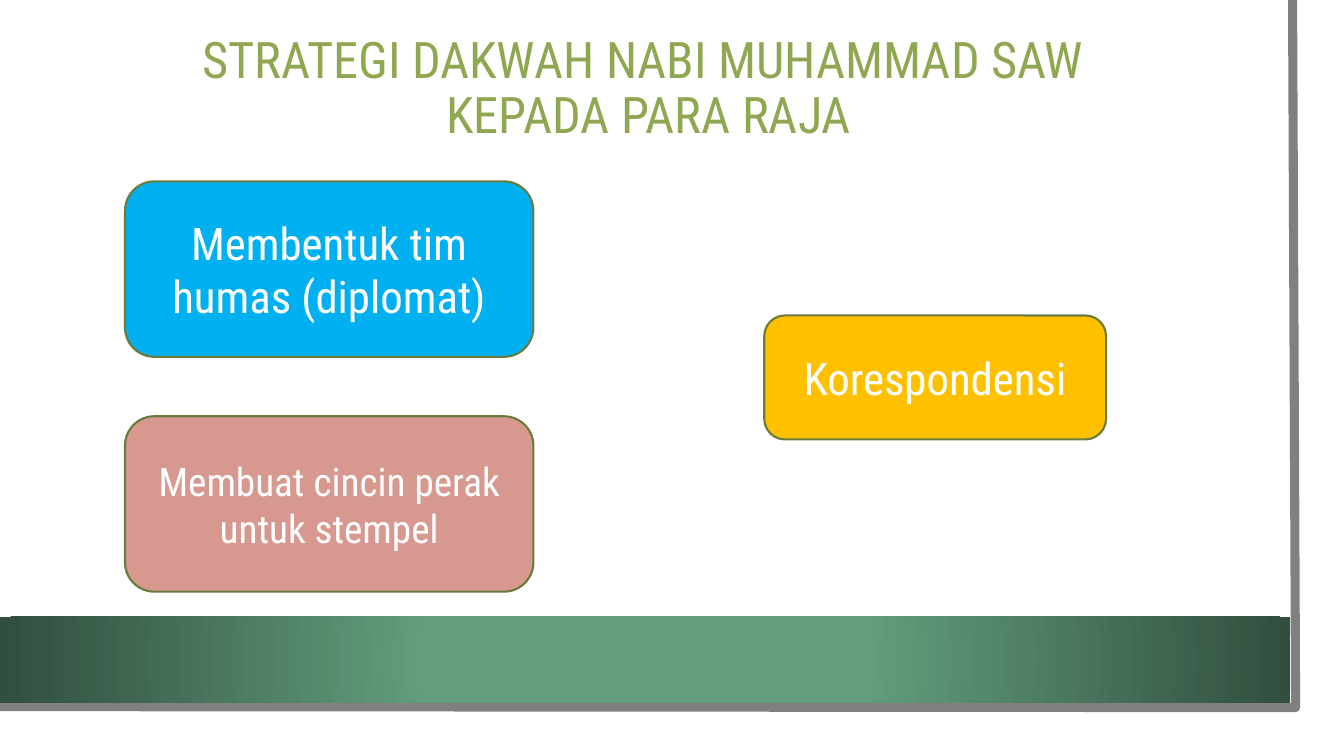
from lxml import etree
from pptx import Presentation, util as u
from pptx.dml.color import RGBColor
from pptx.enum import shapes, text
from pptx.oxml import ns

WHITE = RGBColor(0xFF, 0xFF, 0xFF)
GREY = RGBColor(0x80, 0x80, 0x80)
OLIVE = RGBColor(0x8F, 0xA7, 0x51)
DARK_OLIVE = RGBColor(0x6A, 0x7C, 0x3C)
GREEN = RGBColor(0x62, 0x9D, 0x7D)
DARK_GREEN = RGBColor(0x31, 0x4E, 0x3E)
BLUE = RGBColor(0x00, 0xB0, 0xF0)
ROSE = RGBColor(0xD6, 0x98, 0x8F)
AMBER = RGBColor(0xFF, 0xC0, 0x00)


def write(shape, words, *, font, size, color, spacing=None):
    """Put centred text in a shape; a newline becomes a line break."""
    frame = shape.text_frame
    frame.word_wrap = True
    frame.vertical_anchor = text.MSO_ANCHOR.MIDDLE
    para = frame.paragraphs[0]
    para.alignment = text.PP_ALIGN.CENTER
    para.line_spacing = spacing
    for number, line in enumerate(words.split("\n")):
        if number:
            para.add_line_break()
        span = para.add_run()
        span.text = line
        span.font.name = font
        span.font.size = u.Pt(size)
        span.font.color.rgb = color


class SlideBuilder:
    font = "Roboto Condensed"

    def __init__(self, page):
        self.page = page

    def shape(self, kind, at, fill=None):
        shape = self.page.shapes.add_shape(kind, *map(u.Inches, at))
        shape.shadow.inherit = False
        shape.line.fill.background()
        if fill is not None:
            shape.fill.solid()
            shape.fill.fore_color.rgb = fill
        return shape

    def radial_bar(self, at, inner, outer, inner_stop):
        bar = self.shape(shapes.MSO_SHAPE.RECTANGLE, at)
        bar.fill.gradient()
        settings = ((inner, inner_stop), (outer, 1))
        for stop, (color, position) in zip(bar.fill.gradient_stops, settings):
            stop.color.rgb = color
            stop.position = position
        # Swap the linear direction for a circle around the centre
        gradient = bar.fill._fill._gradFill
        gradient.remove(gradient.find(ns.qn("a:lin")))
        circle = etree.SubElement(gradient, ns.qn("a:path"), path="circle")
        etree.SubElement(circle, ns.qn("a:fillToRect"),
                         {side: "50000" for side in "ltrb"})

    def edge(self, points, color, width):
        start, *rest = [tuple(map(u.Inches, point)) for point in points]
        builder = self.page.shapes.build_freeform(*start)
        builder.add_line_segments(rest, close=False)
        edge = builder.convert_to_shape()
        edge.shadow.inherit = False
        edge.fill.background()
        edge.line.color.rgb = color
        edge.line.width = u.Pt(width)

    def title(self, words, at):
        box = self.page.shapes.add_textbox(*map(u.Inches, at))
        write(box, words, font=self.font, size=36, color=OLIVE, spacing=0.9)

    def card(self, words, at, fill, size=32):
        card = self.shape(shapes.MSO_SHAPE.ROUNDED_RECTANGLE, at, fill)
        card.line.color.rgb = DARK_OLIVE
        card.line.width = u.Pt(1.5)
        write(card, words, font=self.font, size=size, color=WHITE)


def main():
    deck = Presentation()
    deck.slide_width = u.Inches(13.33)
    deck.slide_height = u.Inches(7.5)
    slide = SlideBuilder(deck.slides.add_slide(deck.slide_layouts[6]))

    # Sheet with grey edge and green band
    slide.shape(shapes.MSO_SHAPE.RECTANGLE, (0, 0, 13.1, 7.27), WHITE)
    slide.edge([(12.82, 0), (12.85, 7.02), (-0.03, 7.01)], GREY, 6.5)
    slide.radial_bar((0, 6.12, 12.8, 0.85), GREEN, DARK_GREEN, 0.34)

    # Title
    slide.title("STRATEGI DAKWAH NABI MUHAMMAD SAW \nKEPADA PARA RAJA",
                (0.75, 0.26, 11.37, 1.26))

    # Strategy cards
    slide.card("Membentuk tim humas (diplomat)", (1.24, 1.8, 4.05, 1.74), BLUE)
    slide.card("Membuat cincin perak untuk stempel",
               (1.24, 4.13, 4.05, 1.74), ROSE, size=28)
    slide.card("Korespondensi", (7.58, 3.13, 3.39, 1.23), AMBER)

    deck.save("out.pptx")


if __name__ == "__main__":
    main()
